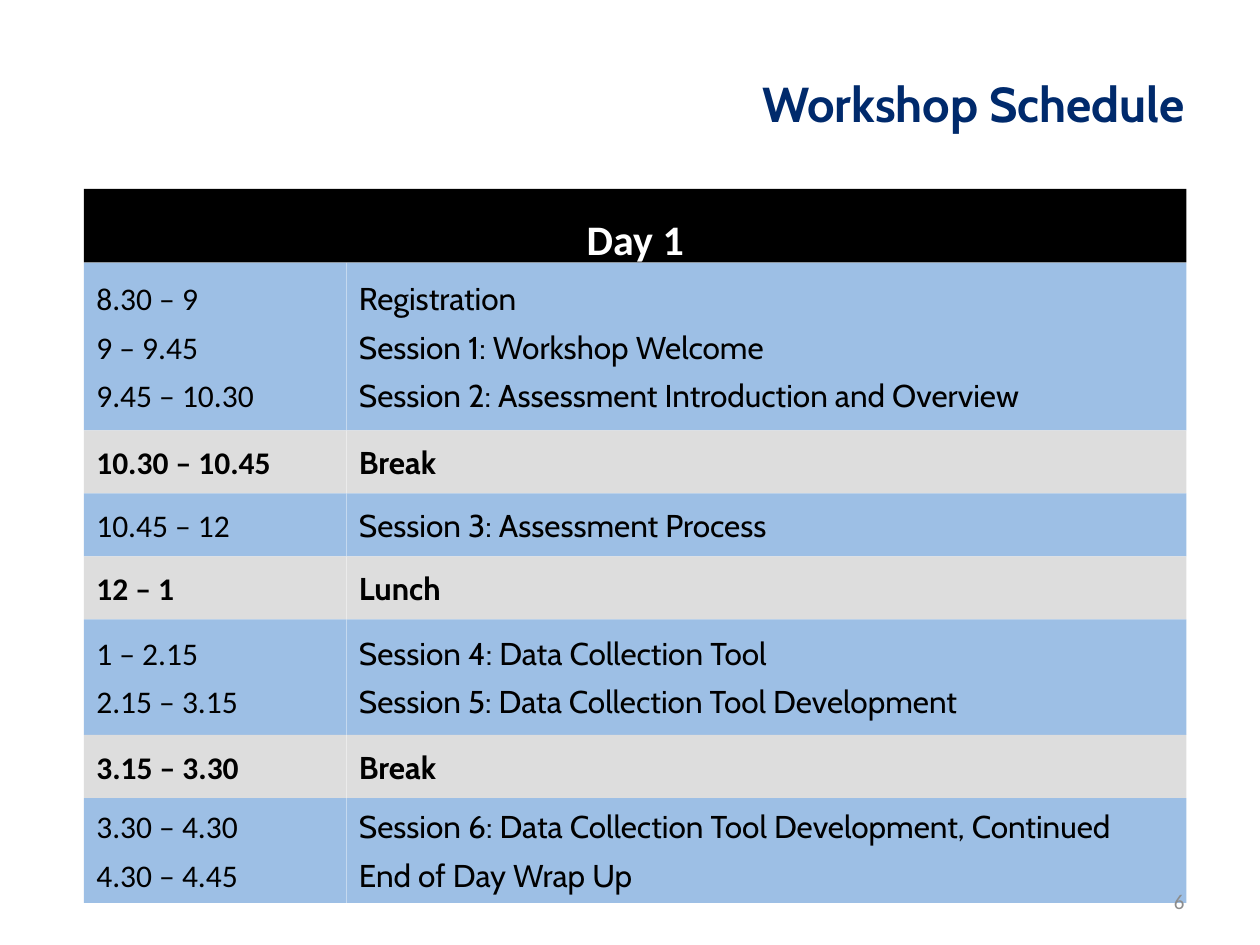
from dataclasses import dataclass
from typing import Any

from pptx import Presentation
from pptx.dml.color import RGBColor
from pptx.enum.shapes import MSO_SHAPE
from pptx.enum.text import MSO_ANCHOR, PP_ALIGN
from pptx.util import Pt

RECTANGLE = MSO_SHAPE.RECTANGLE
MIDDLE = MSO_ANCHOR.MIDDLE
LEFT, CENTER, RIGHT = PP_ALIGN.LEFT, PP_ALIGN.CENTER, PP_ALIGN.RIGHT

NAVY = RGBColor(0x00, 0x2A, 0x6C)
BLACK = RGBColor(0x00, 0x00, 0x00)
WHITE = RGBColor(0xFF, 0xFF, 0xFF)
SESSION_BLUE = RGBColor(0x9D, 0xBF, 0xE5)
BREAK_GRAY = RGBColor(0xDD, 0xDD, 0xDD)
NUMBER_GRAY = RGBColor(0x8C, 0x8C, 0x8C)

TABLE_LEFT, HEADER_TOP, HEADER_HEIGHT = 48, 108, 42
TIME_WIDTH, TOPIC_WIDTH = 150, 480


@dataclass(frozen=True)
class Box:
    left: float
    top: float
    width: float
    height: float

    def in_points(self) -> tuple[Pt, Pt, Pt, Pt]:
        return Pt(self.left), Pt(self.top), Pt(self.width), Pt(self.height)


@dataclass(frozen=True)
class TextStyle:
    font: dict[str, Any]
    color: RGBColor
    paragraph: dict[str, Any]


@dataclass(frozen=True)
class Period:
    height: float
    times: list[str]
    topics: list[str]
    is_break: bool = False


SCHEDULE = [
    Period(96, ["8.30 – 9", "9 – 9.45", "9.45 – 10.30"],
           ["Registration", "Session 1: Workshop Welcome",
            "Session 2: Assessment Introduction and Overview"]),
    Period(36, ["10.30 – 10.45"], ["Break"], True),
    Period(36, ["10.45 – 12"], ["Session 3: Assessment Process"]),
    Period(36, ["12 – 1"], ["Lunch"], True),
    Period(66, ["1 – 2.15", "2.15 – 3.15"],
           ["Session 4: Data Collection Tool",
            "Session 5: Data Collection Tool Development"]),
    Period(36, ["3.15 – 3.30"], ["Break"], True),
    Period(60, ["3.30 – 4.30", "4.30 – 4.45"],
           ["Session 6: Data Collection Tool Development, Continued",
            "End of Day Wrap Up"]),
]


def apply_format(target: Any, values: dict[str, Any]) -> None:
    for attribute, value in values.items():
        setattr(target, attribute, value)


def write_lines(holder: Any, lines: list[str], style: TextStyle) -> None:
    frame = holder.text_frame
    apply_format(frame, {"word_wrap": True, "vertical_anchor": MIDDLE})
    frame.text = "\n".join(lines)
    for paragraph in frame.paragraphs:
        apply_format(paragraph, style.paragraph)
        run_font = paragraph.runs[0].font
        apply_format(run_font, style.font)
        run_font.color.rgb = style.color


def draw_label(slide: Any, box: Box, text: str, style: TextStyle) -> None:
    write_lines(slide.shapes.add_textbox(*box.in_points()), [text], style)


def draw_block(slide: Any, box: Box, fill: RGBColor, lines: list[str],
               style: TextStyle) -> None:
    block = slide.shapes.add_shape(RECTANGLE, *box.in_points())
    block.shadow.inherit = False
    block.fill.solid()
    block.fill.fore_color.rgb = fill
    block.line.fill.background()
    write_lines(block, lines, style)


def draw_period(slide: Any, period: Period, top: float) -> None:
    fill = BREAK_GRAY if period.is_break else SESSION_BLUE
    columns = [
        (TABLE_LEFT, TIME_WIDTH, period.times, "Calibri"),
        (TABLE_LEFT + TIME_WIDTH, TOPIC_WIDTH, period.topics, "Cabin"),
    ]
    for left, width, lines, typeface in columns:
        style = TextStyle(
            {"name": typeface, "size": Pt(18), "bold": period.is_break},
            BLACK, {"alignment": LEFT, "space_after": Pt(6)})
        draw_block(slide, Box(left, top, width, period.height), fill, lines, style)


def main() -> None:
    presentation = Presentation()
    apply_format(presentation, {"slide_width": Pt(720), "slide_height": Pt(540)})
    slide = presentation.slides.add_slide(presentation.slide_layouts[6])

    draw_label(slide, Box(36, 21.6, 648, 74.2), "Workshop Schedule", TextStyle(
        {"name": "Cabin", "size": Pt(28), "bold": True}, NAVY,
        {"alignment": RIGHT}))

    top = HEADER_TOP + HEADER_HEIGHT
    for period in SCHEDULE:
        draw_period(slide, period, top)
        top += period.height

    day_header = Box(TABLE_LEFT, HEADER_TOP, TIME_WIDTH + TOPIC_WIDTH, HEADER_HEIGHT)
    draw_block(slide, day_header, BLACK, ["Day 1"], TextStyle(
        {"name": "Calibri", "size": Pt(24), "bold": True}, WHITE,
        {"alignment": CENTER, "line_spacing": 1.5}))

    draw_label(slide, Box(516, 500.4, 168, 28.8), "6", TextStyle(
        {"name": "Calibri", "size": Pt(12)}, NUMBER_GRAY, {"alignment": RIGHT}))

    presentation.save("out.pptx")


if __name__ == "__main__":
    main()
